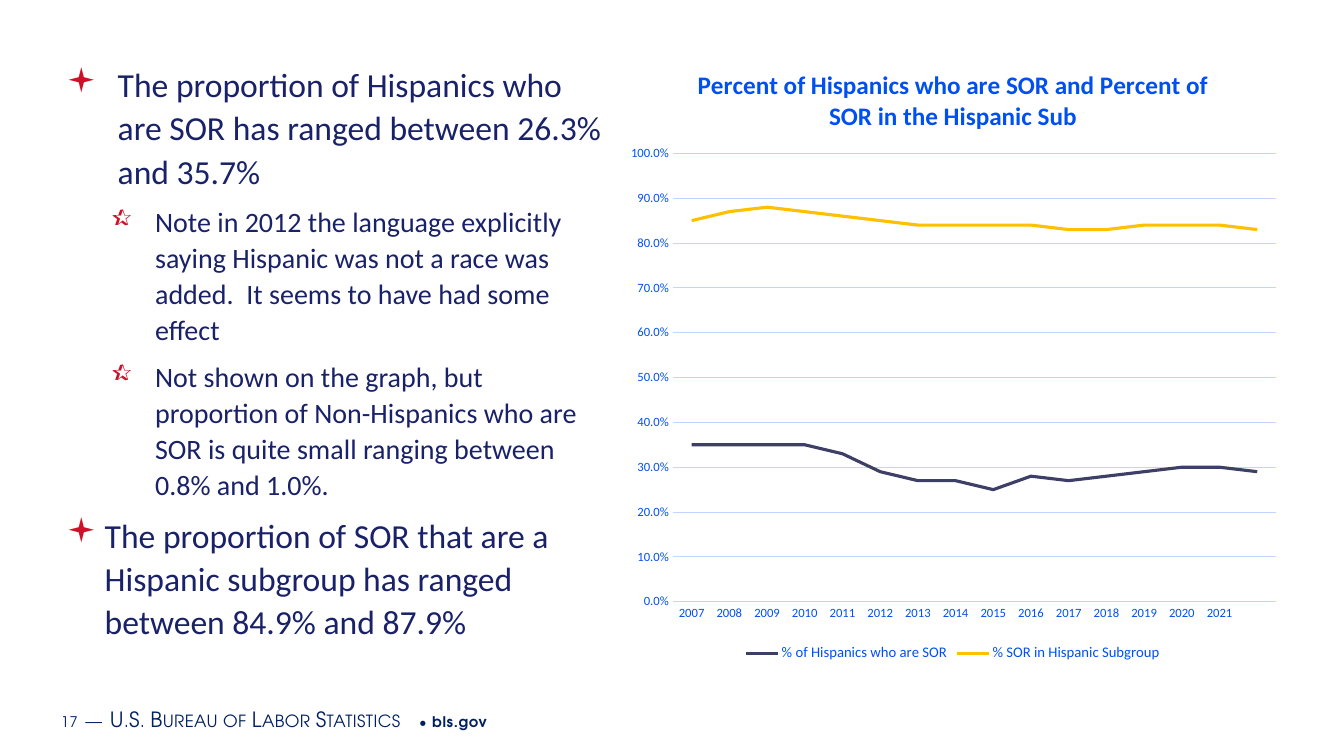
from lxml import etree
from pptx import Presentation
from pptx.chart.data import CategoryChartData
from pptx.dml.color import RGBColor
from pptx.enum import chart as ch, text as tx
from pptx.oxml import parse_xml
from pptx.oxml.ns import nsdecls, qn
from pptx.util import Pt

NAVY, INDIGO, RED = "002060", "192168", "CE1126"
BLUE, GRID = "0050F1", "C1D6FF"


def color(hex_code):
    return RGBColor.from_string(hex_code)


def format_font(font, size, hex_code, name="Calibri", bold=False):
    font.size, font.name, font.bold = Pt(size), name, bold
    font.color.rgb = color(hex_code)


def add_text(paragraph, words, *, size, hex_code, name="Calibri", bold=False,
             spacing=None, small_caps=False):
    run = paragraph.add_run()
    run.text = words
    format_font(run.font, size, hex_code, name, bold)
    properties = run._r.get_or_add_rPr()
    if spacing is not None:
        properties.set("spc", str(round(spacing * 100)))
    if small_caps:
        properties.set("cap", "small")


class SlideBuilder:
    def __init__(self, width, height):
        self.deck = Presentation()
        self.deck.slide_width, self.deck.slide_height = Pt(width), Pt(height)
        self.slide = self.deck.slides.add_slide(self.deck.slide_layouts[6])

    def text_frame(self, left, top, width, height, anchor):
        frame = self.slide.shapes.add_textbox(
            Pt(left), Pt(top), Pt(width), Pt(height)).text_frame
        frame.word_wrap = True
        frame.vertical_anchor = anchor
        return frame

    def footer(self, box, pieces):
        frame = self.text_frame(*box, tx.MSO_ANCHOR.MIDDLE)
        frame.margin_left = frame.margin_right = Pt(5)
        frame.margin_top = frame.margin_bottom = Pt(3)
        for words, style in pieces:
            add_text(frame.paragraphs[0], words, hex_code=NAVY,
                     name="TeX Gyre Adventor", **style)

    def bullets(self, box, points):
        frame = self.text_frame(*box, tx.MSO_ANCHOR.TOP)
        for index, (level, margin, hanging, words) in enumerate(points):
            paragraph = frame.paragraphs[0] if index == 0 else frame.add_paragraph()
            size, mark, percent = [(24, "▪", 100), (20, "▶", 90)][level]
            properties = paragraph._p.get_or_add_pPr()
            properties.set("marL", str(Pt(margin)))
            properties.set("indent", str(-Pt(hanging)))
            bullet_color = etree.SubElement(properties, qn("a:buClr"))
            etree.SubElement(bullet_color, qn("a:srgbClr"), val=RED)
            etree.SubElement(properties, qn("a:buSzPct"), val=str(percent * 1000))
            etree.SubElement(properties, qn("a:buFont"), typeface="Wingdings")
            etree.SubElement(properties, qn("a:buChar"), char=mark)
            paragraph.level = level
            paragraph.line_spacing = 1.07
            paragraph.space_after = Pt(8)
            add_text(paragraph, words, size=size, hex_code=INDIGO)

    def line_chart(self, box, plot_box, title, categories, series):
        data = CategoryChartData(number_format="0.0%")
        data.categories = categories
        for name, _, values in series:
            data.add_series(name, values)
        chart = self.slide.shapes.add_chart(
            ch.XL_CHART_TYPE.LINE, *map(Pt, box), data).chart
        format_font(chart.font, 10, NAVY)

        # Title and legend
        chart.has_title = True
        add_text(chart.chart_title.text_frame.paragraphs[0], title,
                 size=18, hex_code=BLUE, bold=True)
        chart.chart_title.include_in_layout = False
        chart.has_legend = True
        chart.legend.position = ch.XL_LEGEND_POSITION.BOTTOM
        chart.legend.include_in_layout = False
        format_font(chart.legend.font, 10.5, BLUE)

        # Axes
        for axis in (chart.category_axis, chart.value_axis):
            axis.major_tick_mark = axis.minor_tick_mark = ch.XL_TICK_MARK.NONE
            format_font(axis.tick_labels.font, 9, BLUE)
        percent_axis = chart.value_axis
        percent_axis.minimum_scale, percent_axis.maximum_scale = 0, 1
        percent_axis.major_unit = 0.1
        percent_axis.tick_labels.number_format = "0.0%"
        percent_axis.tick_labels.number_format_is_linked = False
        percent_axis.format.line.fill.background()
        for line in (chart.category_axis.format.line,
                     percent_axis.major_gridlines.format.line):
            line.color.rgb, line.width = color(GRID), Pt(0.75)

        # Series lines
        plot = chart.plots[0]
        plot.vary_by_categories = False
        for plotted, (_, hex_code, _) in zip(plot.series, series):
            plotted.smooth = False
            plotted.marker.style = ch.XL_MARKER_STYLE.NONE
            plotted.format.line.color.rgb = color(hex_code)
            plotted.format.line.width = Pt(2.25)

        # Plot area position inside the chart, turned into shares of its size
        shares = "".join(f'<c:{tag} val="{length / whole}"/>' for tag, length, whole
                         in zip("xywh", plot_box, box[2:] * 2))
        plot_area = chart._chartSpace.chart.plotArea
        for old_layout in plot_area.findall(qn("c:layout")):
            plot_area.remove(old_layout)
        plot_area.insert(0, parse_xml(
            f'<c:layout {nsdecls("c")}><c:manualLayout>'
            '<c:layoutTarget val="inner"/><c:xMode val="edge"/>'
            f'<c:yMode val="edge"/>{shares}</c:manualLayout></c:layout>'))


def main():
    builder = SlideBuilder(960, 540)

    # Findings
    builder.bullets((40.3, 40.3, 401, 451.4), [
        (0, 36.7, 36.7, "The proportion of Hispanics who are SOR has ranged "
                        "between 26.3% and 35.7%"),
        (1, 63.4, 31.7, "Note in 2012 the language explicitly saying Hispanic was "
                        "not a race was added.  It seems to have had some effect"),
        (1, 63.4, 31.7, "Not shown on the graph, but proportion of Non-Hispanics "
                        "who are SOR is quite small ranging between 0.8% and 1.0%."),
        (0, 27.4, 27.4, "The proportion of SOR that are a Hispanic subgroup has "
                        "ranged between 84.9% and 87.9%"),
    ])

    # Chart: the last point has no year label
    builder.line_chart(
        (440.6, 32.4, 480.2, 443.5), (40, 77.2, 431, 320.3),
        "Percent of Hispanics who are SOR and Percent of SOR in the Hispanic Sub",
        [str(year) for year in range(2007, 2022)] + [""],
        [("% of Hispanics who are SOR", "3E3F67",
          [0.35, 0.35, 0.35, 0.35, 0.33, 0.29, 0.27, 0.27,
           0.25, 0.28, 0.27, 0.28, 0.29, 0.3, 0.3, 0.29]),
         ("% SOR in Hispanic Subgroup", "FFC000",
          [0.85, 0.87, 0.88, 0.87, 0.86, 0.85, 0.84, 0.84,
           0.84, 0.84, 0.83, 0.83, 0.84, 0.84, 0.84, 0.83])])

    # Footer
    note = dict(size=10.5, spacing=0.5)
    gap = dict(size=16, spacing=0.5)
    agency = dict(size=15, spacing=0.3, small_caps=True)
    builder.footer((38.5, 499, 610, 28.8), [
        ("17", note), (" ", gap), ("—", agency), (" ", gap),
        ("U.S. Bureau of Labor Statistics", agency),
        (" • ", note), ("bls.gov", dict(note, bold=True))])

    builder.deck.save("out.pptx")


if __name__ == "__main__":
    main()
